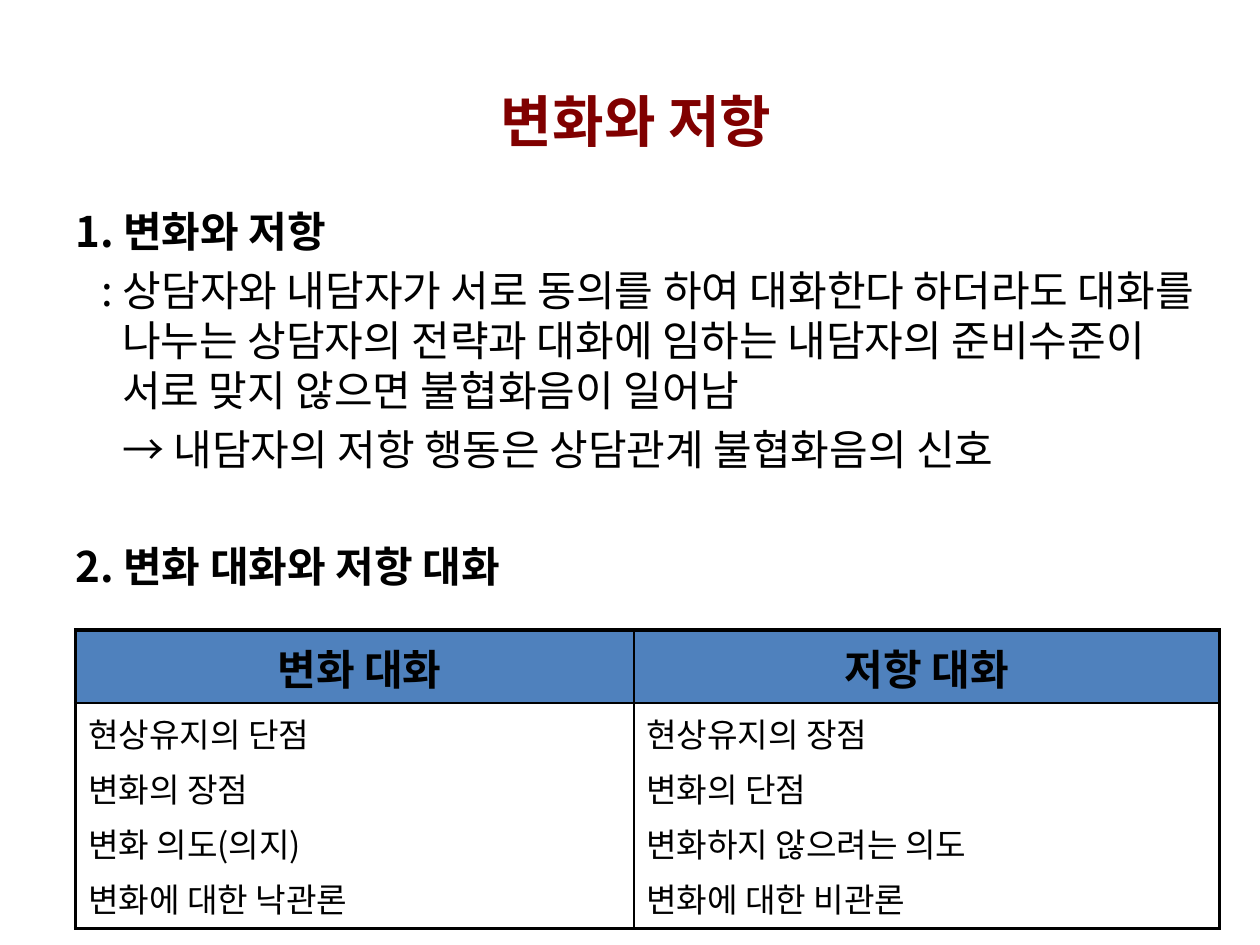
from dataclasses import dataclass

from lxml import etree
from pptx import Presentation
from pptx import util as u
from pptx.dml.color import RGBColor
from pptx.enum import text
from pptx.oxml import ns


@dataclass(frozen=True)
class Theme:
    font: str = "Noto Sans CJK KR"
    ink: RGBColor = RGBColor(0, 0, 0)
    title_ink: RGBColor = RGBColor(0x80, 0, 0)
    header_fill: RGBColor = RGBColor(0x4F, 0x81, 0xBD)
    title_size: float = 32
    body_size: float = 24
    cell_size: float = 19
    outer_line: float = 2.25
    inner_line: float = 1


THEME = Theme()

OUTLINE = [
    ("1. 변화와 저항", True, 0.37, -0.37, 0),
    (": 상담자와 내담자가 서로 동의를 하여 대화한다 하더라도 대화를 나누는 "
     "상담자의 전략과 대화에 임하는 내담자의 준비수준이 서로 맞지 않으면 "
     "불협화음이 일어남", False, 0.37, -0.16, 4.8),
    ("→ 내담자의 저항 행동은 상담관계 불협화음의 신호", False, 0.37, 0, 4.8),
    ("2. 변화 대화와 저항 대화", True, 0.37, -0.37, 38.1),
]

TALK_TYPES = [
    (" 변화 대화",
     ["현상유지의 단점", "변화의 장점", "변화 의도(의지)", "변화에 대한 낙관론"]),
    ("저항 대화",
     ["현상유지의 장점", "변화의 단점", "변화하지 않으려는 의도", "변화에 대한 비관론"]),
]


def add_span(para, words, size, color=THEME.ink, bold=False):
    span = para.add_run()
    span.text = words
    span.font.name = THEME.font
    span.font.size = u.Pt(size)
    span.font.bold = bold
    span.font.color.rgb = color
    properties = span.font._element
    properties.set("kern", "0")
    east_asian = etree.Element(ns.qn("a:ea"), typeface=THEME.font)
    properties.find(ns.qn("a:latin")).addnext(east_asian)


def next_para(frame, index):
    return frame.paragraphs[0] if index == 0 else frame.add_paragraph()


def place(shape, box):
    shape.left, shape.top, shape.width, shape.height = map(u.Inches, box)


def add_title(page, box):
    title = page.shapes.title
    place(title, box)
    frame = title.text_frame
    frame.vertical_anchor = text.MSO_ANCHOR.MIDDLE
    para = frame.paragraphs[0]
    para.alignment = text.PP_ALIGN.CENTER
    add_span(para, "변화와 저항", THEME.title_size, THEME.title_ink, True)


def add_outline(page, box):
    frame = page.shapes.add_textbox(*map(u.Inches, box)).text_frame
    frame.word_wrap = True
    frame.margin_top = 0
    for index, (words, bold, margin, indent, before) in enumerate(OUTLINE):
        para = next_para(frame, index)
        para.space_before = u.Pt(before)
        properties = para._p.get_or_add_pPr()
        properties.set("marL", str(u.Inches(margin)))
        properties.set("indent", str(u.Inches(indent)))
        add_span(para, words, THEME.body_size, bold=bold)


def draw_borders(cell, outer_sides):
    properties = cell._tc.get_or_add_tcPr()
    for side in "LRTB":
        points = THEME.outer_line if side in outer_sides else THEME.inner_line
        line = etree.SubElement(properties, ns.qn(f"a:ln{side}"), w=str(u.Pt(points)))
        fill = etree.SubElement(line, ns.qn("a:solidFill"))
        etree.SubElement(fill, ns.qn("a:srgbClr"), val=str(THEME.ink))


def add_talk_table(page, box, column_widths, row_heights):
    table = page.shapes.add_table(2, 2, *map(u.Inches, box)).table
    table.horz_banding = False
    for column, width in zip(table.columns, column_widths):
        column.width = u.Inches(width)
    for row, height in zip(table.rows, row_heights):
        row.height = u.Inches(height)

    for index, (heading, items) in enumerate(TALK_TYPES):
        side = "LR"[index]
        header, body = table.cell(0, index), table.cell(1, index)
        draw_borders(header, side + "T")
        draw_borders(body, side + "B")
        header.fill.solid()
        header.fill.fore_color.rgb = THEME.header_fill
        body.fill.background()

        para = header.text_frame.paragraphs[0]
        para.alignment = text.PP_ALIGN.CENTER
        para.space_before = u.Pt(THEME.body_size * 0.2)
        add_span(para, heading, THEME.body_size, bold=True)
        for number, item in enumerate(items):
            para = next_para(body.text_frame, number)
            para.space_before = u.Pt(THEME.cell_size * 0.2)
            add_span(para, item, THEME.cell_size)


def main():
    deck = Presentation()
    deck.slide_width, deck.slide_height = u.Inches(10), u.Inches(7.5)
    page = deck.slides.add_slide(deck.slide_layouts.get_by_name("Title Only"))
    add_outline(page, (0.5, 1.63, 9.19, 3.44))
    add_title(page, (0.55, 0.23, 9, 1.45))
    add_talk_table(page, (0.6, 5, 9.08, 2.37), (4.43, 4.65), (0.58, 1.79))
    deck.save("out.pptx")


if __name__ == "__main__":
    main()
